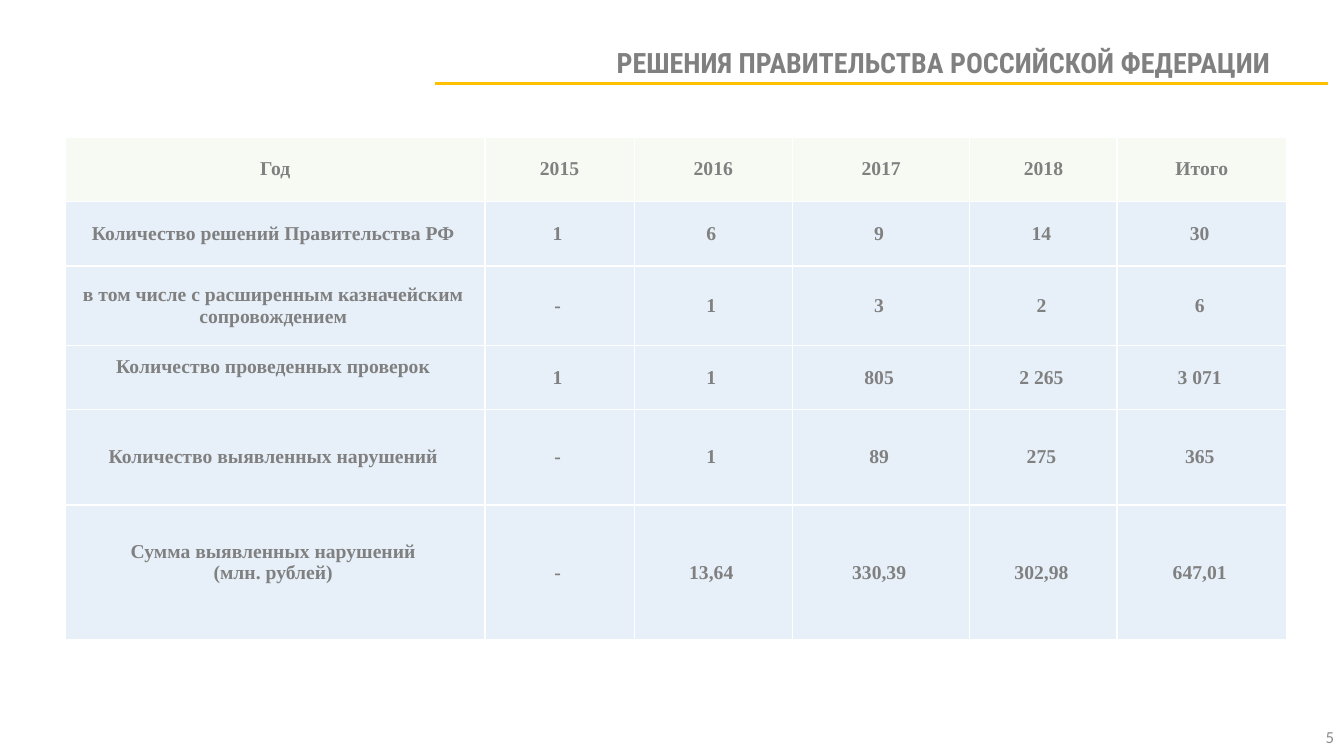
from dataclasses import dataclass

from lxml import etree
from pptx import Presentation
from pptx.dml.color import RGBColor
from pptx.enum.shapes import MSO_CONNECTOR
from pptx.enum.text import MSO_ANCHOR, PP_ALIGN
from pptx.oxml.ns import qn
from pptx.util import Pt

CENTER, RIGHT = PP_ALIGN.CENTER, PP_ALIGN.RIGHT
TOP, MIDDLE = MSO_ANCHOR.TOP, MSO_ANCHOR.MIDDLE
STRAIGHT = MSO_CONNECTOR.STRAIGHT
SCALE = 9144

WIDTHS = [416, 148, 157, 176, 146, 168]
HEIGHTS = [64, 64, 79, 63, 95, 134]
ROWS = [
    ["Год", "2015", "2016", "2017", "2018", "Итого"],
    ["Количество решений Правительства РФ", "1", "6", "9", "14", "30"],
    ["в том числе с расширенным казначейским сопровождением", "-", "1", "3", "2", "6"],
    ["Количество проведенных проверок", "1", "1", "805", "2 265", "3 071"],
    ["Количество выявленных нарушений", "-", "1", "89", "275", "365"],
    ["Сумма выявленных нарушений\n(млн. рублей)", "-", "13,64", "330,39", "302,98", "647,01"],
]
RAISED = {(3, 0), (5, 0)}


@dataclass(frozen=True)
class Theme:
    """Colours, fonts and type sizes of the slide."""
    ink: str = "808080"
    pale: str = "8C8C8C"
    gold: str = "FFC000"
    grid: str = "FFFFFF"
    head: tuple = ("F2F8EE", 65)
    body: tuple = ("DEEBF7", 71)
    serif: str = "Times New Roman"
    sans: str = "Calibri"
    title: str = "Roboto Condensed"
    small: int = 12
    text: int = 14
    large: int = 20


def px(n):
    """Turn px into EMU."""
    return n * SCALE


def write(frame, text, *, font, size, color, bold=False, align=CENTER):
    """Fill a text frame, one paragraph for each line."""
    frame.word_wrap = True
    for i, line in enumerate(text.split("\n")):
        para = frame.add_paragraph() if i else frame.paragraphs[0]
        para.alignment = align
        run = para.add_run()
        run.text = line
        run.font.name = font
        run.font.size = Pt(size)
        run.font.bold = bold
        run.font.color.rgb = RGBColor.from_string(color)


class Canvas:
    """Draws elements on one slide in one theme."""

    def __init__(self, slide, theme):
        """Keep the slide and its theme."""
        self.slide = slide
        self.theme = theme

    def label(self, text, box, *, anchor=TOP, inset=10, **style):
        """Add a text box with a chosen right inset."""
        frame = self.slide.shapes.add_textbox(*map(px, box)).text_frame
        frame.margin_left, frame.margin_right = px(10), px(inset)
        frame.margin_top = frame.margin_bottom = px(5)
        frame.vertical_anchor = anchor
        write(frame, text, **style)

    def rule(self, start, end, color, width):
        """Add a straight line."""
        line = self.slide.shapes.add_connector(STRAIGHT, *map(px, start + end))
        line.line.color.rgb = RGBColor.from_string(color)
        line.line.width = Pt(width)
        etree.SubElement(line._element.spPr, qn("a:effectLst"))

    def paint(self, cell, color, alpha):
        """Give a cell a sheer fill and thin borders."""
        cell.fill.solid()
        cell.fill.fore_color.rgb = RGBColor.from_string(color)
        props = cell._tc.get_or_add_tcPr()
        tint = props.find(".//" + qn("a:srgbClr"))
        etree.SubElement(tint, qn("a:alpha"), val=str(alpha * 1000))
        for i, side in enumerate("LRTB"):
            edge = etree.Element(qn("a:ln" + side), w=str(Pt(1)))
            fill = etree.SubElement(edge, qn("a:solidFill"))
            etree.SubElement(fill, qn("a:srgbClr"), val=self.theme.grid)
            props.insert(i, edge)

    def table(self, left, top, rows, widths, heights):
        """Add a table with a head row and centred cells."""
        look = self.theme
        box = (left, top, sum(widths), sum(heights))
        grid = self.slide.shapes.add_table(len(rows), len(widths), *map(px, box)).table
        grid.first_row = grid.horz_banding = False
        for col, width in zip(grid.columns, widths):
            col.width = px(width)
        for r, (row, height) in enumerate(zip(rows, heights)):
            grid.rows[r].height = px(height)
            for c, text in enumerate(row):
                cell = grid.cell(r, c)
                cell.margin_left = px(4 if r == 0 and c > 1 else 0)
                cell.margin_right = px(0 if r == 0 and c < 2 else 4)
                cell.margin_top = 0
                cell.margin_bottom = px(20 if (r, c) in RAISED else 0)
                cell.vertical_anchor = MIDDLE
                write(cell.text_frame, text, font=look.serif, size=look.text,
                      color=look.ink, bold=True)
                self.paint(cell, *(look.body if r else look.head))


def main():
    """Build and save the slide."""
    deck = Presentation()
    deck.slide_width, deck.slide_height = px(1333), px(750)
    look = Theme()
    page = Canvas(deck.slides.add_slide(deck.slide_layouts[6]), look)
    page.table(65, 136, ROWS, WIDTHS, HEIGHTS)
    page.label("5", (1033, 711, 300, 40), anchor=MIDDLE, font=look.sans,
               size=look.small, color=look.pale, align=RIGHT)
    page.label("РЕШЕНИЯ ПРАВИТЕЛЬСТВА РОССИЙСКОЙ ФЕДЕРАЦИИ", (468, 40, 809, 44),
               inset=17, font=look.title, size=look.large, color=look.ink,
               bold=True, align=RIGHT)
    page.rule((431, 83), (1317, 83), look.gold, 2)
    deck.save("out.pptx")


if __name__ == "__main__":
    main()
